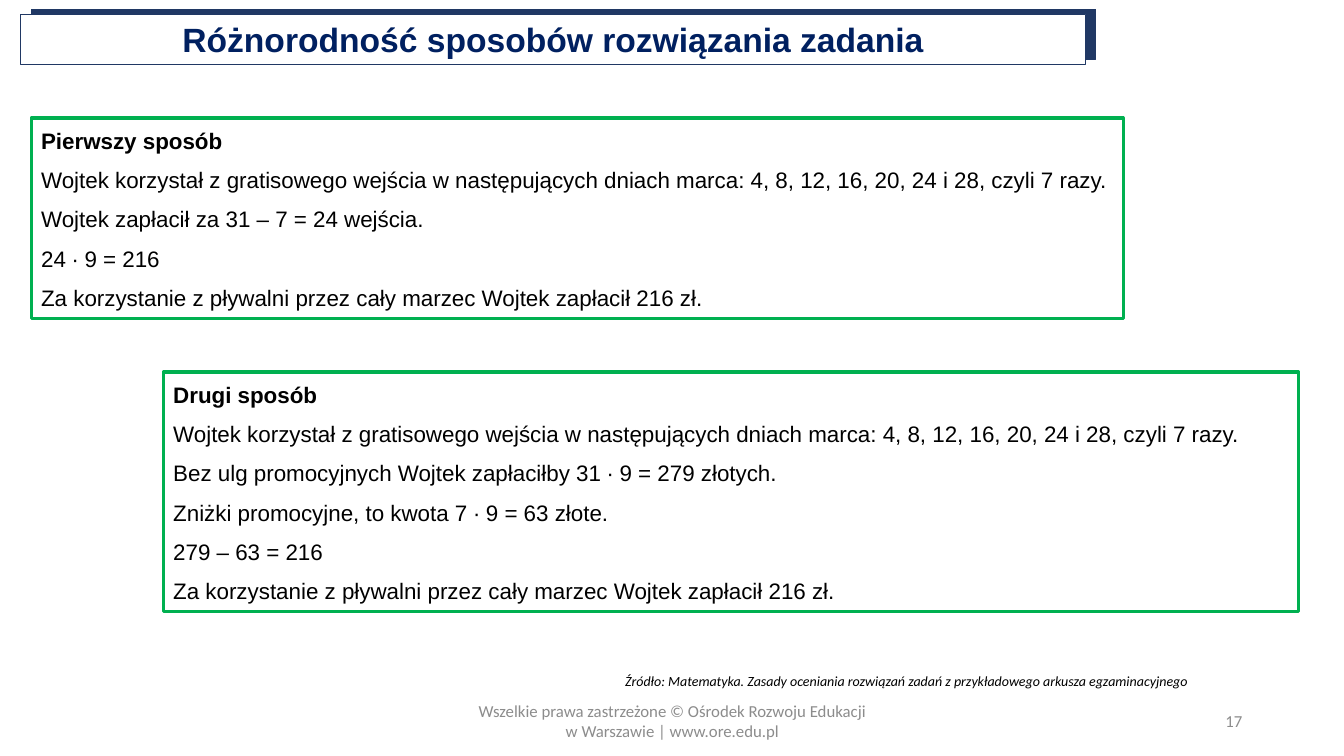
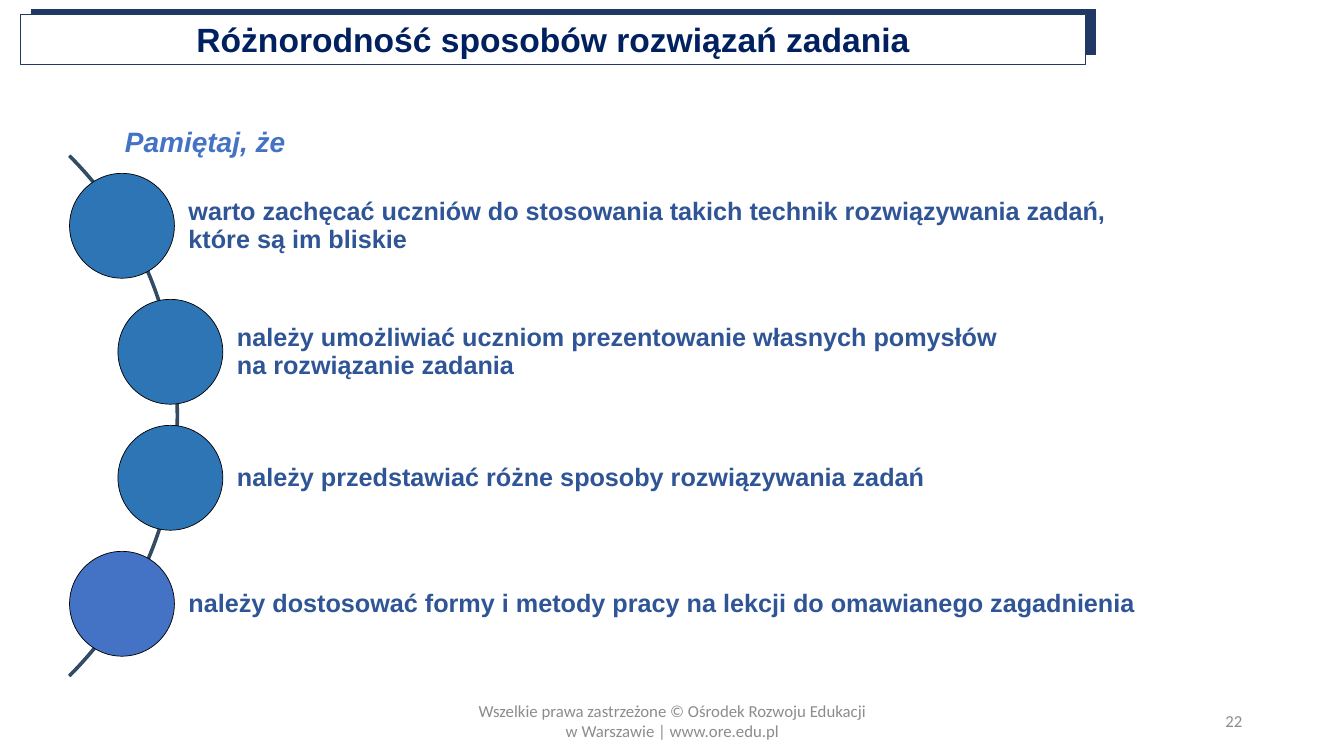
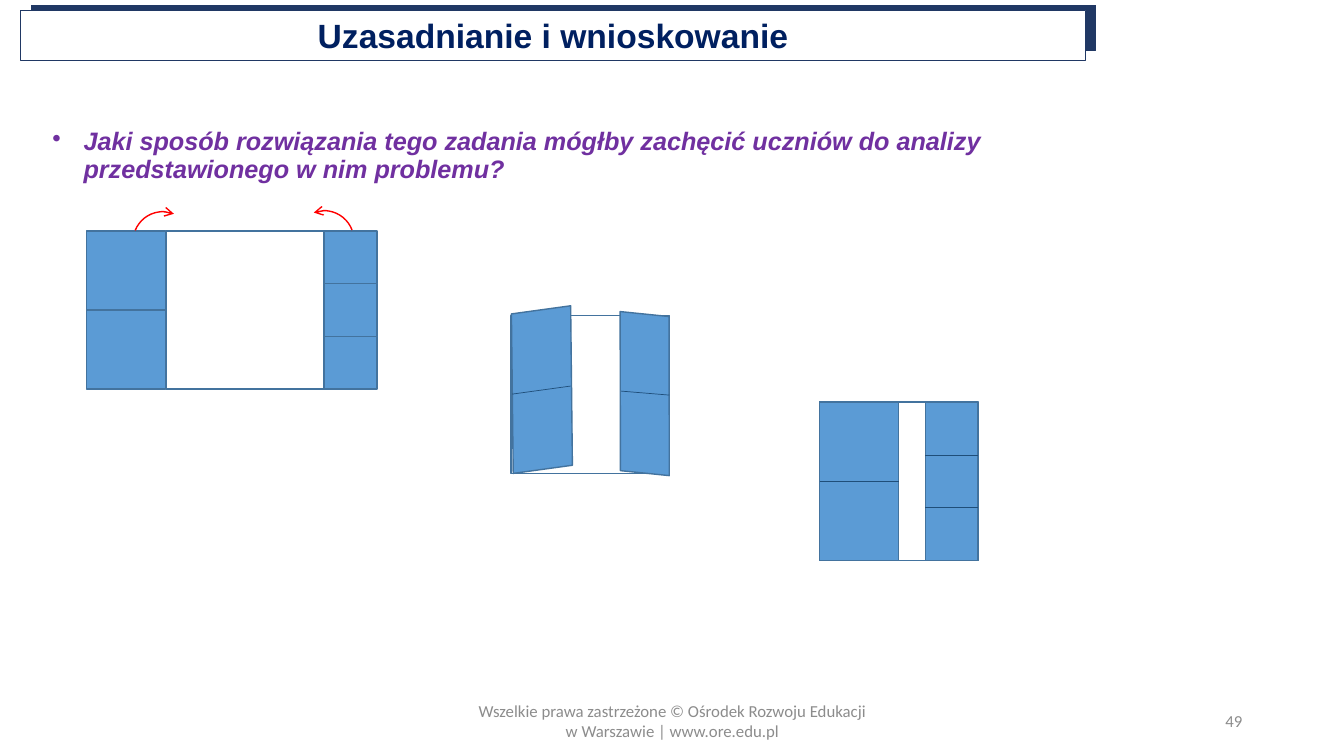
from lxml import etree
from pptx import Presentation
from pptx.dml.color import RGBColor
from pptx.enum.shapes import MSO_CONNECTOR, MSO_SHAPE
from pptx.enum.text import MSO_ANCHOR, MSO_AUTO_SIZE, PP_ALIGN
from pptx.oxml.ns import qn
from pptx.util import Inches, Pt

RECTANGLE, OVAL, ARC = MSO_SHAPE.RECTANGLE, MSO_SHAPE.OVAL, MSO_SHAPE.ARC
BLOCK_ARC, PARALLELOGRAM = MSO_SHAPE.BLOCK_ARC, MSO_SHAPE.PARALLELOGRAM
STRAIGHT = MSO_CONNECTOR.STRAIGHT
TOP, MIDDLE, BOTTOM = MSO_ANCHOR.TOP, MSO_ANCHOR.MIDDLE, MSO_ANCHOR.BOTTOM
LEFT, CENTER, RIGHT = PP_ALIGN.LEFT, PP_ALIGN.CENTER, PP_ALIGN.RIGHT
JUSTIFY = PP_ALIGN.JUSTIFY
NO_FIT = MSO_AUTO_SIZE.NONE

NAVY, TITLE_BLUE, WHITE, BLACK = "203864", "002060", "FFFFFF", "000000"
GRAY, GREEN, RED, PURPLE = "8C8C8C", "00B050", "FF0000", "7030A0"
BLUE, CIRCLE_BLUE, ITEM_BLUE = "4472C4", "2E75B6", "2F5597"
PANEL_BLUE, PANEL_EDGE, FOLD_BLUE = "5B9BD5", "43739E", "1F4E79"
ARC_BROWN = "843C0B"
FOOTER = ["Wszelkie prawa zastrzeżone © Ośrodek Rozwoju Edukacji",
          "w Warszawie | www.ore.edu.pl"]


def color(value):
    """Turn a hex string into a colour."""
    return RGBColor.from_string(value)


class Builder:
    """Hold the deck style and the current slide."""

    def __init__(self):
        self.deck = Presentation()
        self.deck.slide_width = Inches(13.33)
        self.deck.slide_height = Inches(7.5)
        self.slide = None

    def start(self, title, number, top=0.14, band_height=0.45):
        """Add a slide with its title, band and footer."""
        self.slide = self.deck.slides.add_slide(self.deck.slide_layouts[5])
        heading = self.slide.shapes.title
        heading.left, heading.top = Inches(0.2), Inches(top)
        heading.width, heading.height = Inches(10.57), Inches(0.5)
        self.paint(heading, WHITE, NAVY, 0.75)
        self.set_text(heading, [title], 24, TITLE_BLUE, CENTER, MIDDLE, bold=True)
        band = self.shape(RECTANGLE, 0.31, top - 0.05, 10.56, band_height, NAVY, NAVY, 0.75)
        heading.element.addprevious(band.element)
        self.text(4.42, 6.95, 4.5, 0.4, FOOTER, 12, GRAY, CENTER, MIDDLE, font="Calibri")
        self.text(9.42, 6.95, 3, 0.4, [number], 12, GRAY, RIGHT, MIDDLE, font="Calibri")

    def paint(self, shape, fill, line, weight):
        """Set the fill and outline of a shape."""
        if fill:
            shape.fill.solid()
            shape.fill.fore_color.rgb = color(fill)
        else:
            shape.fill.background()
        shape.line.color.rgb = color(line)
        shape.line.width = Pt(weight)

    def shape(self, kind, left, top, width, height, fill, line, weight=1, turn=0):
        """Add a preset shape."""
        shape = self.slide.shapes.add_shape(
            kind, Inches(left), Inches(top), Inches(width), Inches(height))
        shape.shadow.inherit = False
        shape.rotation = turn
        self.paint(shape, fill, line, weight)
        return shape

    def set_text(self, box, lines, size, ink, align=LEFT, anchor=TOP, font="Arial",
                 bold=False, italic=False, spacing=1.0, after=0, bullet=False):
        """Put paragraphs of one style into a box."""
        frame = box.text_frame
        frame.word_wrap = True
        frame.auto_size = NO_FIT
        frame.vertical_anchor = anchor
        for index, line in enumerate(lines):
            paragraph = frame.add_paragraph() if index else frame.paragraphs[0]
            paragraph.text = line
            paragraph.alignment = align
            paragraph.line_spacing = spacing
            paragraph.space_after = Pt(after if index < len(lines) - 1 else 0)
            if bullet:
                properties = paragraph._p.get_or_add_pPr()
                indent = Inches(0.31)
                properties.set("marL", str(indent))
                properties.set("indent", str(-indent))
                etree.SubElement(properties, qn("a:buChar"), char="•")
            paragraph.font.name = font
            paragraph.font.size = Pt(size)
            paragraph.font.bold = bold
            paragraph.font.italic = italic
            paragraph.font.color.rgb = color(ink)
        return frame

    def text(self, left, top, width, height, lines, size, ink, *layout, **style):
        """Add a text box and return its frame."""
        box = self.slide.shapes.add_textbox(
            Inches(left), Inches(top), Inches(width), Inches(height))
        return self.set_text(box, lines, size, ink, *layout, **style)

    def solution(self, left, top, width, height, lines):
        """Add a green frame whose first line is a bold heading."""
        box = self.shape(RECTANGLE, left, top, width, height, None, GREEN, 2.25)
        frame = self.set_text(box, lines, 16, BLACK, JUSTIFY, spacing=1.15, after=6)
        frame.paragraphs[0].font.bold = True

    def item(self, left, top, text, fill):
        """Add a circle with the advice beside it."""
        middle = left + 0.52
        frame = self.text(middle, top + 0.11, 11.41 - middle, 0.83, [text],
                          18, ITEM_BLUE, LEFT, MIDDLE, bold=True, spacing=0.9)
        frame.margin_left = Inches(0.66)
        frame.margin_right = Inches(0.05)
        self.shape(OVAL, left, top, 1.04, 1.04, fill, BLACK, 0.5)

    def panel(self, left, top, width, height, fill=PANEL_BLUE):
        """Add an upright paper panel."""
        self.shape(RECTANGLE, left, top, width, height, fill, PANEL_EDGE)

    def flap(self, left, top, width, height, turn, mirrored=False):
        """Add a half-folded panel."""
        flap = self.shape(PARALLELOGRAM, left, top, width, height,
                          PANEL_BLUE, PANEL_EDGE, turn=turn)
        if mirrored:
            flap.element.spPr.xfrm.set("flipH", "1")

    def curved_arrow(self, left, top, turn, end):
        """Add a red arc with an open arrowhead at one end."""
        arc = self.shape(ARC, left, top, 0.59, 0.59, None, RED, turn=turn)
        outline = arc.element.spPr.find(qn("a:ln"))
        etree.SubElement(outline, qn(end), type="arrow")

    def crease(self, left, start, right, finish):
        """Add a thin line across a panel."""
        line = self.slide.shapes.add_connector(
            STRAIGHT, Inches(left), Inches(start), Inches(right), Inches(finish))
        line.line.color.rgb = color(FOLD_BLUE)
        line.line.width = Pt(0.5)
        etree.SubElement(line.element.spPr, qn("a:effectLst"))


def build_solutions(builder):
    """Build the slide with two ways of solving."""
    builder.start("Różnorodność sposobów rozwiązania zadania", "17", band_height=0.5)
    source = builder.text(
        6.04, 6.55, 6.54, 0.41,
        ["Źródło: Matematyka. Zasady oceniania rozwiązań zadań "
         "z przykładowego arkusza egzaminacyjnego"],
        10, BLACK, LEFT, MIDDLE, font="Calibri", italic=True)
    source.margin_left = Inches(0.16)
    free_days = ("Wojtek korzystał z gratisowego wejścia w następujących dniach marca: "
                 "4, 8, 12, 16, 20, 24 i 28, czyli 7 razy.")
    answer = "Za korzystanie z pływalni przez cały marzec Wojtek zapłacił 216 zł."
    builder.solution(0.31, 1.17, 10.83, 1.99, [
        "Pierwszy sposób", free_days, "Wojtek zapłacił za 31 – 7 = 24 wejścia.",
        "24 ∙ 9 = 216", answer])
    builder.solution(1.62, 3.69, 11.26, 2.38, [
        "Drugi sposób", free_days,
        "Bez ulg promocyjnych Wojtek zapłaciłby 31 ∙ 9 = 279 złotych.",
        "Zniżki promocyjne, to kwota 7 ∙ 9 = 63 złote.", "279 – 63 = 216", answer])


def build_advice(builder):
    """Build the slide with advice along an arc."""
    builder.start("Różnorodność sposobów rozwiązań zadania", "22")
    arc = builder.shape(BLOCK_ARC, -5.54, 0.47, 7.31, 7.31, ARC_BROWN, FOLD_BLUE)
    for index, value in enumerate((189, 27, 0.003)):
        arc.adjustments[index] = value
    items = [
        (0.69, "warto zachęcać uczniów do stosowania takich technik rozwiązywania zadań, "
               "które są im bliskie", CIRCLE_BLUE),
        (1.17, "należy umożliwiać uczniom prezentowanie własnych pomysłów\n"
               "na rozwiązanie zadania", CIRCLE_BLUE),
        (1.17, "należy przedstawiać różne sposoby rozwiązywania zadań", CIRCLE_BLUE),
        (0.69, "należy dostosować formy i metody pracy na lekcji "
               "do omawianego zagadnienia", BLUE),
    ]
    for row, (left, text, fill) in enumerate(items):
        builder.item(left, 1.72 + row * 1.25, text, fill)
    builder.text(1.14, 1.19, 1.9, 0.44, ["Pamiętaj, że"], 20, BLUE, bold=True, italic=True)


def build_folding(builder):
    """Build the slide with a sheet folded in three steps."""
    builder.start("Uzasadnianie i wnioskowanie", "49", top=0.1)
    builder.text(
        0.42, 0.99, 10.45, 0.88,
        ["Jaki sposób rozwiązania tego zadania mógłby zachęcić uczniów do analizy "
         "przedstawionego w nim problemu?"],
        18, PURPLE, LEFT, BOTTOM, bold=True, italic=True, spacing=0.9, bullet=True)
    side = 1.57
    half, third = side / 2, side / 3

    left, top = 0.86, 2.29
    for row in range(2):
        builder.panel(left, top + row * half, half, half)
    builder.panel(left + half, top, side, side, WHITE)
    for row in range(3):
        builder.panel(left + half + side, top + row * third, third, third)
    builder.curved_arrow(2.92, 2.09, 339.6, "a:headEnd")
    builder.curved_arrow(1.32, 2.1, 291.7, "a:tailEnd")

    builder.panel(5.07, 3.13, side, side, WHITE)
    builder.flap(4.98, 3.08, 0.79, side, 352.2)
    builder.flap(6.07, 3.12, 0.65, side, 5.8, mirrored=True)
    builder.crease(5.08, 3.91, 5.66, 3.83)
    builder.crease(6.16, 3.88, 6.64, 3.92)

    left, top = 8.13, 3.99
    right = left + side
    builder.panel(left, top, side, side, WHITE)
    builder.panel(left, top, half, side)
    builder.panel(right - third, top, third, side)
    builder.crease(left, top + half, left + half, top + half)
    for row in (1, 2):
        builder.crease(right - third, top + row * third, right, top + row * third)


def main():
    """Build and save the deck."""
    builder = Builder()
    build_solutions(builder)
    build_advice(builder)
    build_folding(builder)
    builder.deck.save("out.pptx")


if __name__ == "__main__":
    main()
